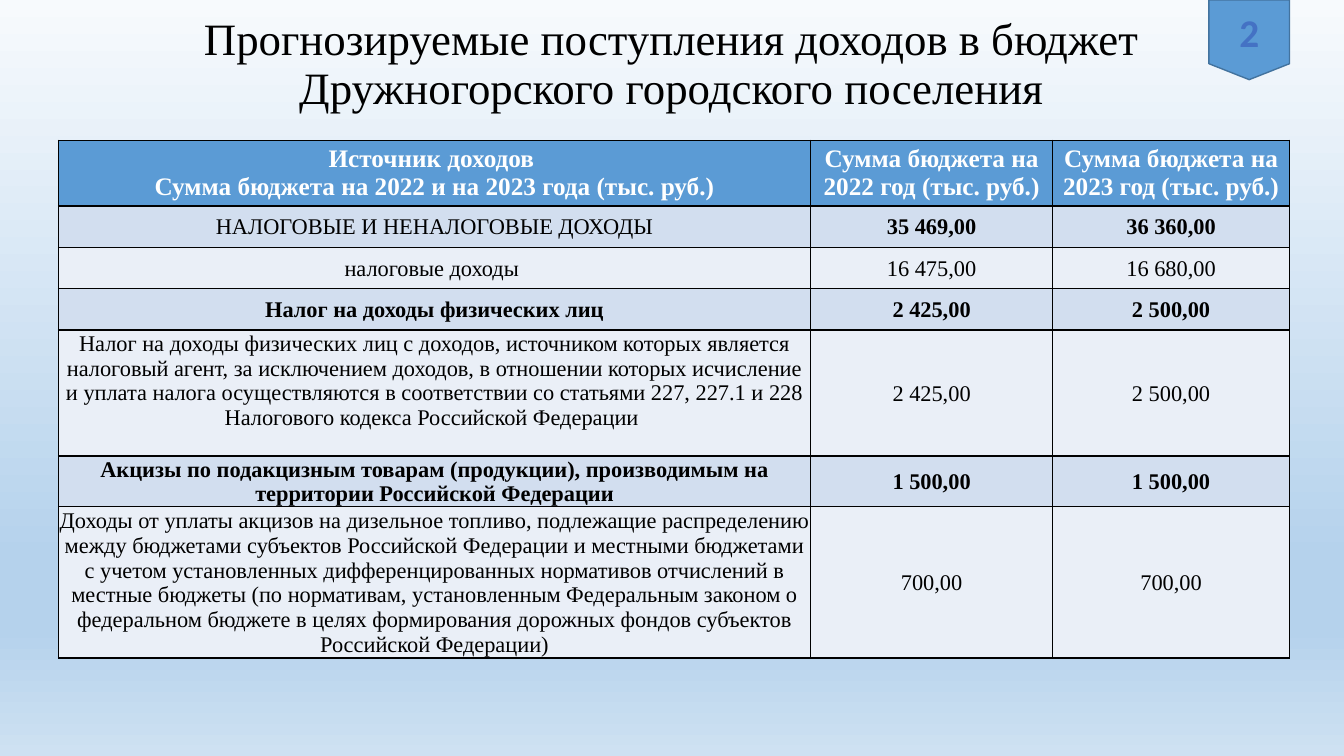
from lxml import etree
from pptx import Presentation
from pptx.dml.color import RGBColor
from pptx.enum.shapes import MSO_SHAPE
from pptx.enum.text import MSO_ANCHOR, MSO_AUTO_SIZE, PP_ALIGN
from pptx.oxml.ns import qn
from pptx.util import Inches, Pt

CENTER, MIDDLE, BOTTOM = PP_ALIGN.CENTER, MSO_ANCHOR.MIDDLE, MSO_ANCHOR.BOTTOM
PENTAGON = MSO_SHAPE.FLOWCHART_OFFPAGE_CONNECTOR

# Content
TITLE = "Прогнозируемые поступления доходов в бюджет Дружногорского городского поселения"
PAGE_NUMBER = "2"
HEADER = (
    "Источник доходов \nСумма бюджета на 2022 и на 2023 года (тыс. руб.)",
    "Сумма бюджета на 2022 год (тыс. руб.)",
    "Сумма бюджета на 2023 год (тыс. руб.)",
)
INCOME = [  # source, 2022, 2023, source bold, sums bold, row height
    ("НАЛОГОВЫЕ И НЕНАЛОГОВЫЕ ДОХОДЫ", "35 469,00", "36 360,00", False, True, 0.41),
    ("налоговые доходы ", "16 475,00", "16 680,00", False, False, 0.41),
    ("Налог на доходы физических лиц", "2 425,00", "2 500,00", True, True, 0.41),
    ("Налог на доходы физических лиц с доходов, источником которых является "
     "налоговый агент, за исключением доходов, в отношении которых исчисление "
     "и уплата налога осуществляются в соответствии со статьями 227, 227.1 и 228 "
     "Налогового кодекса Российской Федерации ",
     "2 425,00", "2 500,00", False, False, 1.25),
    ("Акцизы по подакцизным товарам (продукции), производимым на "
     "территории Российской Федерации", "1 500,00", "1 500,00", True, True, 0.5),
    ("Доходы от уплаты акцизов на дизельное топливо, подлежащие распределению "
     "между бюджетами субъектов Российской Федерации и местными бюджетами "
     "с учетом установленных дифференцированных нормативов отчислений в "
     "местные бюджеты (по нормативам, установленным Федеральным законом о "
     "федеральном бюджете в целях формирования дорожных фондов субъектов "
     "Российской Федерации)", "700,00", "700,00", False, False, 1.5),
]
TAX_AGENT_ROW = 4

# Format
COLORS = {"header": "5B9BD5", "odd": "D2DEEF", "even": "EAEFF7", "border": "000000",
          "text": "000000", "header_text": "FFFFFF", "badge_line": "43739E",
          "number": "4472C4"}
BACKGROUND = [(0, "F7FAFD"), (74, "B5D2EC"), (83, "B5D2EC"), (100, "CEE1F2")]
SERIF, SANS = "Times New Roman", "Calibri"
COLUMNS = (7.46, 2.4, 2.35)
HEADER_HEIGHT = 0.65
TABLE_LEFT, TABLE_TOP = 0.58, 1.39
BADGE_WIDTH, BADGE_HEIGHT = 0.8, 0.79
HEADER_MARGINS = {"margin_left": 0.1, "margin_right": 0.1,
                  "margin_top": 0.05, "margin_bottom": 0.05}
BODY_MARGINS = {"margin_left": 0.01, "margin_right": 0.01,
                "margin_top": 0.01, "margin_bottom": 0}


def rgb(name):
    return RGBColor.from_string(COLORS[name])


def write(frame, text, size, color, bold=False, face=SERIF):
    frame.text = text
    for paragraph in frame.paragraphs:
        paragraph.alignment = CENTER
        for run in paragraph.runs:
            for key, value in {"size": Pt(size), "bold": bold, "name": face}.items():
                setattr(run.font, key, value)
            run.font.color.rgb = rgb(color)


def add_borders(cell):
    properties = cell._tc.get_or_add_tcPr()
    for position, side in enumerate(("lnL", "lnR", "lnT", "lnB")):
        line = etree.Element(qn("a:" + side), w=str(Pt(1)))
        solid = etree.SubElement(line, qn("a:solidFill"))
        etree.SubElement(solid, qn("a:srgbClr"), val=COLORS["border"])
        properties.insert(position, line)


def set_background(slide):
    fill = slide.background.fill
    fill.gradient()
    fill.gradient_angle = 270
    stops = slide.background._cSld.find(".//" + qn("a:gsLst"))
    for stop in list(stops):
        stops.remove(stop)
    for share, color in BACKGROUND:
        stop = etree.SubElement(stops, qn("a:gs"), pos=str(share * 1000))
        etree.SubElement(stop, qn("a:srgbClr"), val=color)


def add_title(slide):
    title = slide.shapes.title
    box = {"left": 0.91, "top": 0, "width": 11.5, "height": 1.18}
    for key, value in box.items():
        setattr(title, key, Inches(value))
    frame = title.text_frame
    write(frame, TITLE, 32, "text")
    frame.word_wrap = True
    frame.auto_size = MSO_AUTO_SIZE.NONE
    frame.vertical_anchor = BOTTOM
    frame.paragraphs[0].line_spacing = 0.9


def add_income_table(slide):
    heights = [HEADER_HEIGHT] + [row[-1] for row in INCOME]
    table = slide.shapes.add_table(
        len(heights), len(COLUMNS), Inches(TABLE_LEFT), Inches(TABLE_TOP),
        Inches(sum(COLUMNS)), Inches(sum(heights))).table
    for column, width in zip(table.columns, COLUMNS):
        column.width = Inches(width)
    texts = [HEADER] + [row[:3] for row in INCOME]
    for r, (labels, height) in enumerate(zip(texts, heights)):
        table.rows[r].height = Inches(height)
        for c, label in enumerate(labels):
            cell = table.cell(r, c)
            if r == 0:
                fill, size, color, bold, margins = "header", 18, "header_text", True, HEADER_MARGINS
            else:
                fill = "odd" if r % 2 else "even"
                size, color, margins = 16, "text", BODY_MARGINS
                bold = INCOME[r - 1][3 if c == 0 else 4]
            write(cell.text_frame, label, size, color, bold)
            cell.vertical_anchor = MIDDLE
            for key, value in margins.items():
                setattr(cell, key, Inches(value))
            cell.fill.solid()
            cell.fill.fore_color.rgb = rgb(fill)
            add_borders(cell)
    # One free line under the tax agent text
    table.cell(TAX_AGENT_ROW, 0).margin_bottom = Inches(0.25)


def add_page_badge(slide):
    left = TABLE_LEFT + sum(COLUMNS) - BADGE_WIDTH
    badge = slide.shapes.add_shape(PENTAGON, Inches(left), 0,
                                   Inches(BADGE_WIDTH), Inches(BADGE_HEIGHT))
    badge.shadow.inherit = False
    badge.fill.solid()
    badge.fill.fore_color.rgb = rgb("header")
    badge.line.color.rgb = rgb("badge_line")
    badge.line.width = Pt(1)
    write(badge.text_frame, PAGE_NUMBER, 28, "number", True, SANS)
    badge.text_frame.vertical_anchor = MIDDLE


def main():
    deck = Presentation()
    deck.slide_width, deck.slide_height = Inches(13.33), Inches(7.5)
    slide = deck.slides.add_slide(deck.slide_layouts[5])
    set_background(slide)
    add_title(slide)
    add_income_table(slide)
    add_page_badge(slide)
    deck.save("out.pptx")


if __name__ == "__main__":
    main()
